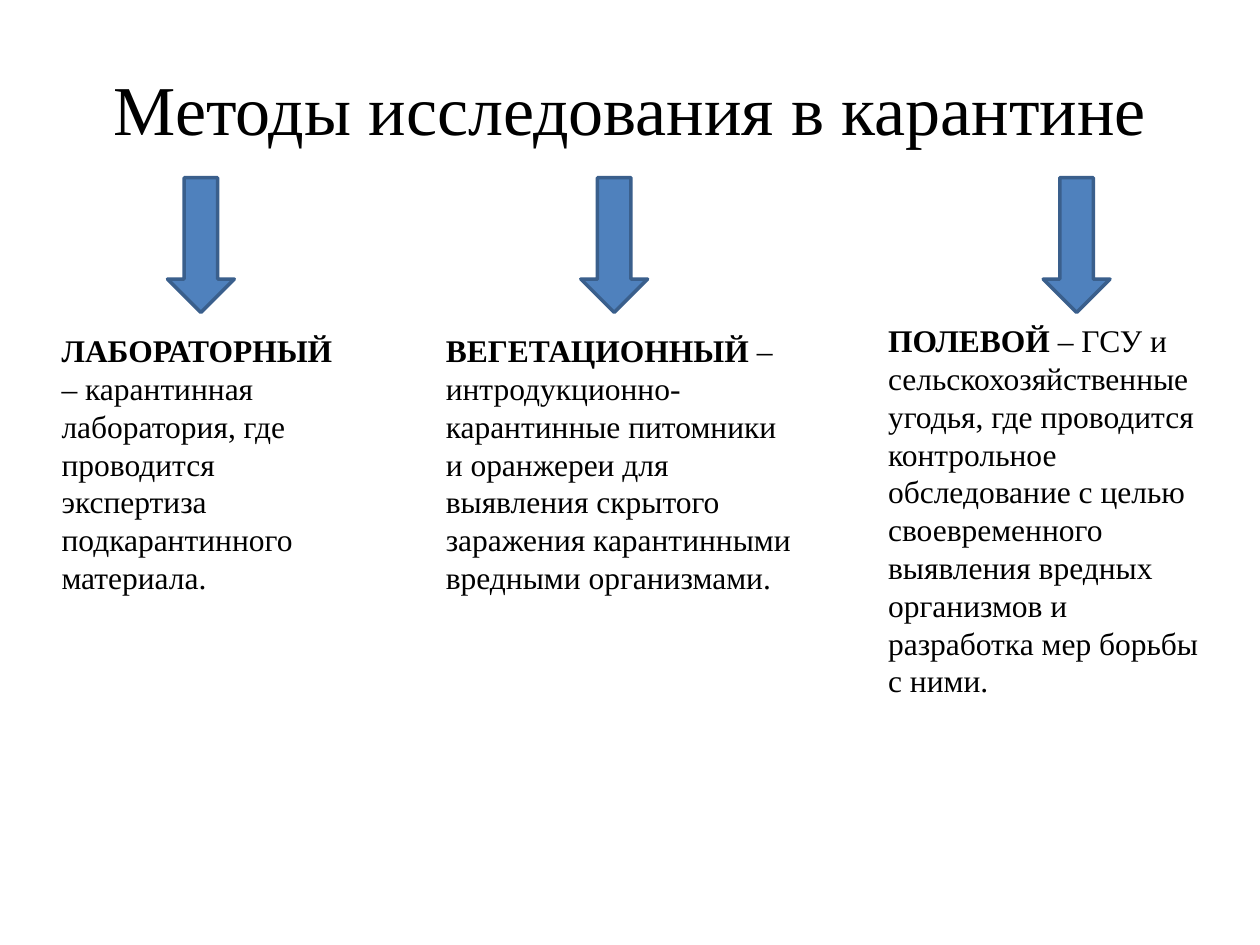
from pptx import Presentation
from pptx import util as u
from pptx.dml.color import RGBColor
from pptx.enum import shapes, text

BLACK = RGBColor(0x00, 0x00, 0x00)
BLUE = RGBColor(0x4F, 0x81, 0xBD)
NAVY = RGBColor(0x3A, 0x5F, 0x8C)
FONT = "Times New Roman"

deck = Presentation()
deck.slide_width = u.Inches(10)
deck.slide_height = u.Inches(7.5)
page = deck.slides.add_slide(deck.slide_layouts[6])


def add_text(left, top, width, height, parts, size, align):
    box = page.shapes.add_textbox(*map(u.Inches, (left, top, width, height)))
    box.text_frame.word_wrap = True
    box.text_frame.auto_size = text.MSO_AUTO_SIZE.SHAPE_TO_FIT_TEXT
    para = box.text_frame.paragraphs[0]
    para.alignment = align
    for words, bold in parts:
        span = para.add_run()
        span.text = words
        span.font.name = FONT
        span.font.size = u.Pt(size)
        span.font.bold = bold
        span.font.color.rgb = BLACK


margin = 0.47
add_text(margin, margin, 10 - 2 * margin, 0.77,
         [("Методы исследования в карантине", False)], 40, text.PP_ALIGN.CENTER)

methods = [
    (1.33, (0.39, 2.58, 2.42, 2.22), "ЛАБОРАТОРНЫЙ",
     " – карантинная лаборатория, где проводится экспертиза подкарантинного материала."),
    (4.61, (3.44, 2.58, 2.97, 2.22), "ВЕГЕТАЦИОННЫЙ",
     " – интродукционно-карантинные питомники и оранжереи для выявления скрытого "
     "заражения карантинными вредными организмами."),
    (8.28, (6.95, 2.5, 2.81, 3.13), "ПОЛЕВОЙ",
     " – ГСУ и сельскохозяйственные угодья, где проводится контрольное обследование "
     "с целью своевременного выявления вредных организмов и разработка мер борьбы с ними."),
]

for arrow_left, area, method, description in methods:
    arrow = page.shapes.add_shape(
        shapes.MSO_SHAPE.DOWN_ARROW, *map(u.Inches, (arrow_left, 1.41, 0.53, 1.07)))
    arrow.shadow.inherit = False
    arrow.fill.solid()
    arrow.fill.fore_color.rgb = BLUE
    arrow.line.color.rgb = NAVY
    arrow.line.width = u.Pt(2)
    add_text(*area, [(method, True), (description, False)], 18, text.PP_ALIGN.LEFT)

deck.save("out.pptx")
